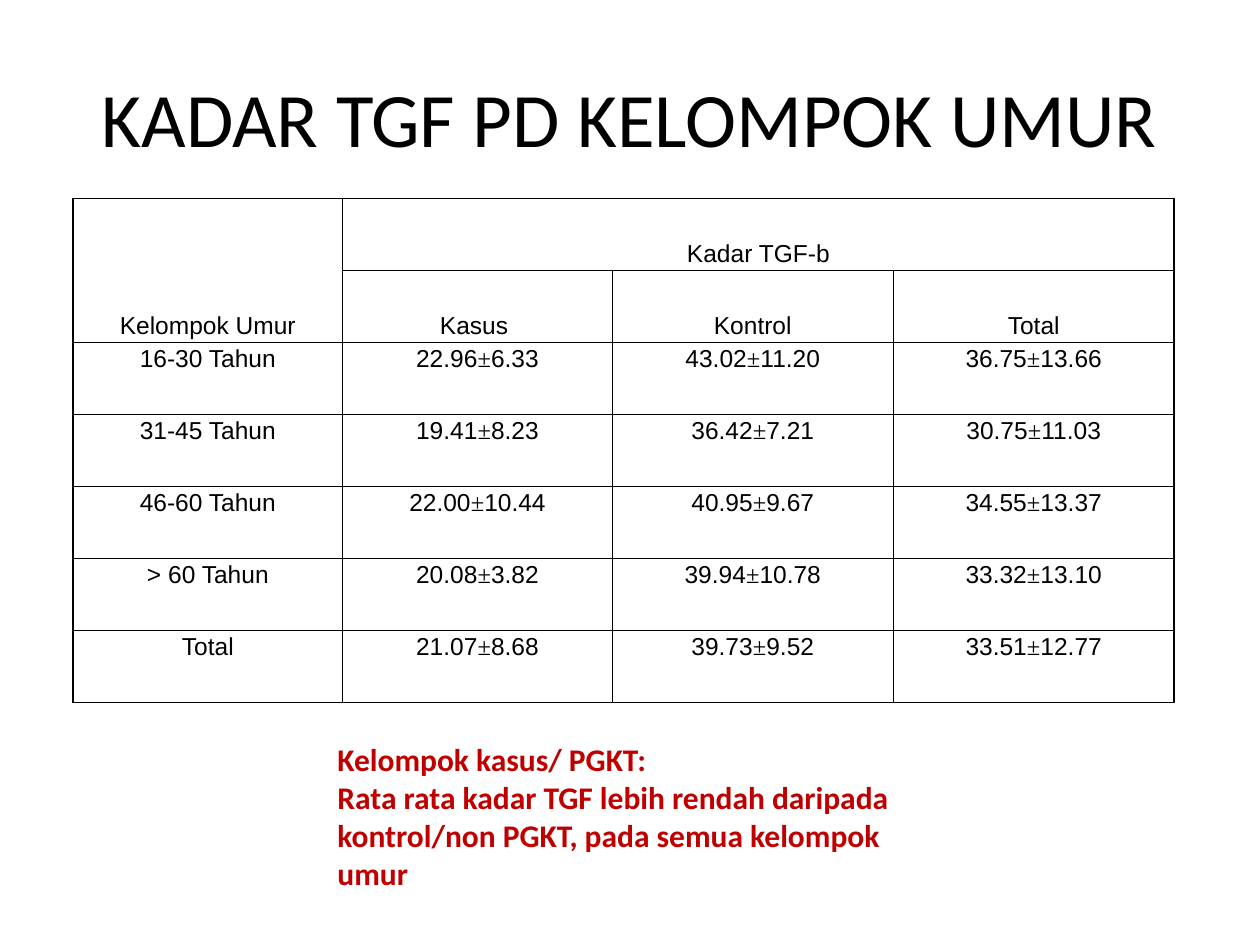
import pptx
import pptx.dml.color
import pptx.enum.text
import pptx.oxml
import pptx.oxml.ns
import pptx.util

BLACK = pptx.dml.color.RGBColor(0x00, 0x00, 0x00)
WHITE = pptx.dml.color.RGBColor(0xFF, 0xFF, 0xFF)
RED = pptx.dml.color.RGBColor(0xC0, 0x00, 0x00)

WIDTH, HEIGHT = pptx.util.Inches(10), pptx.util.Inches(7.5)
COLUMN_WIDTHS = [2.14, 2.14, 2.23, 2.23]
ROW_HEIGHT = 4 / 7
HEADER_ROWS = 2

ROWS = [
    ["Kelompok Umur", "Kadar TGF-b", "", ""],
    ["", "Kasus ", "Kontrol", "Total"],
    ["16-30 Tahun", "22.96±6.33", "43.02±11.20", "36.75±13.66"],
    ["31-45 Tahun", "19.41±8.23", "36.42±7.21", "30.75±11.03"],
    ["46-60 Tahun", "22.00±10.44", "40.95±9.67", "34.55±13.37"],
    ["> 60 Tahun", "20.08±3.82", "39.94±10.78", "33.32±13.10"],
    ["Total", "21.07±8.68", "39.73±9.52", "33.51±12.77"],
]

ANCHOR = pptx.enum.text.MSO_ANCHOR
ALIGN = pptx.enum.text.PP_ALIGN


def add_run(p, text, font, size, color, bold=False):
    r = p.add_run()
    r.text = text
    r.font.name = font
    r.font.size = pptx.util.Pt(size)
    r.font.color.rgb = color
    r.font.bold = bold


def add_text(s, box, lines, size, color, bold=False, align=ALIGN.LEFT, anchor=ANCHOR.TOP):
    """Place a text box; box holds shares of the slide's width and height."""
    x, y, w, h = box
    sp = s.shapes.add_textbox(int(x * WIDTH), int(y * HEIGHT), int(w * WIDTH), int(h * HEIGHT))
    tf = sp.text_frame
    tf.word_wrap = True
    tf.vertical_anchor = anchor
    for i, line in enumerate(lines):
        p = tf.add_paragraph() if i else tf.paragraphs[0]
        p.alignment = align
        add_run(p, line, "Calibri", size, color, bold)
    return sp


def set_borders(cell):
    tc_pr = cell._tc.get_or_add_tcPr()
    ns = pptx.oxml.ns.nsdecls("a")
    for i, side in enumerate(("lnL", "lnR", "lnT", "lnB")):
        tc_pr.insert(i, pptx.oxml.parse_xml(
            f'<a:{side} {ns} w="{pptx.util.Pt(1)}"><a:solidFill>'
            f'<a:srgbClr val="{BLACK}"/></a:solidFill></a:{side}>'))


def fill_cell(cell, text, anchor):
    cell.fill.solid()
    cell.fill.fore_color.rgb = WHITE
    set_borders(cell)
    cell.vertical_anchor = anchor
    cell.margin_left = cell.margin_right = pptx.util.Inches(0.02)
    cell.margin_top = cell.margin_bottom = pptx.util.Inches(0.02)
    p = cell.text_frame.paragraphs[0]
    p.alignment = ALIGN.CENTER
    p.line_spacing = pptx.util.Pt(16)
    # The plus-minus sign has a font of its own
    mean, sign, deviation = text.partition("±")
    for part, font in ((mean, "Arial"), (sign, "Times New Roman"), (deviation, "Arial")):
        if part:
            add_run(p, part, font, 14, BLACK)


def add_level_table(s, left, top):
    frame = s.shapes.add_table(
        len(ROWS), len(COLUMN_WIDTHS), int(left * WIDTH), int(top * HEIGHT),
        pptx.util.Inches(sum(COLUMN_WIDTHS)), pptx.util.Inches(ROW_HEIGHT * len(ROWS)))
    table = frame.table
    table.first_row = table.horz_banding = False
    for column, width in zip(table.columns, COLUMN_WIDTHS):
        column.width = pptx.util.Inches(width)
    for i, row in enumerate(ROWS):
        table.rows[i].height = pptx.util.Inches(ROW_HEIGHT)
        anchor = ANCHOR.BOTTOM if i < HEADER_ROWS else ANCHOR.TOP
        for j, text in enumerate(row):
            fill_cell(table.cell(i, j), text, anchor)
    # Header spans
    table.cell(0, 0).merge(table.cell(1, 0))
    table.cell(0, 1).merge(table.cell(0, 3))


def main():
    prs = pptx.Presentation()
    prs.slide_width, prs.slide_height = WIDTH, HEIGHT
    s = prs.slides.add_slide(prs.slide_layouts[6])

    # Title
    add_text(s, (0.05, 0.04, 0.9, 1 / 6), ["KADAR TGF PD KELOMPOK UMUR"], 44, BLACK,
             align=ALIGN.CENTER, anchor=ANCHOR.MIDDLE)

    # TGF levels by age group
    add_level_table(s, 0.058, 0.21)

    # Conclusion
    sp = add_text(s, (0.258, 0.777, 0.5, 0.175), [
        "Kelompok kasus/ PGKT:",
        "Rata rata kadar TGF lebih rendah daripada kontrol/non PGKT, pada semua kelompok umur",
    ], 18, RED, bold=True)
    sp.text_frame.auto_size = pptx.enum.text.MSO_AUTO_SIZE.SHAPE_TO_FIT_TEXT

    prs.save("out.pptx")


if __name__ == "__main__":
    main()
